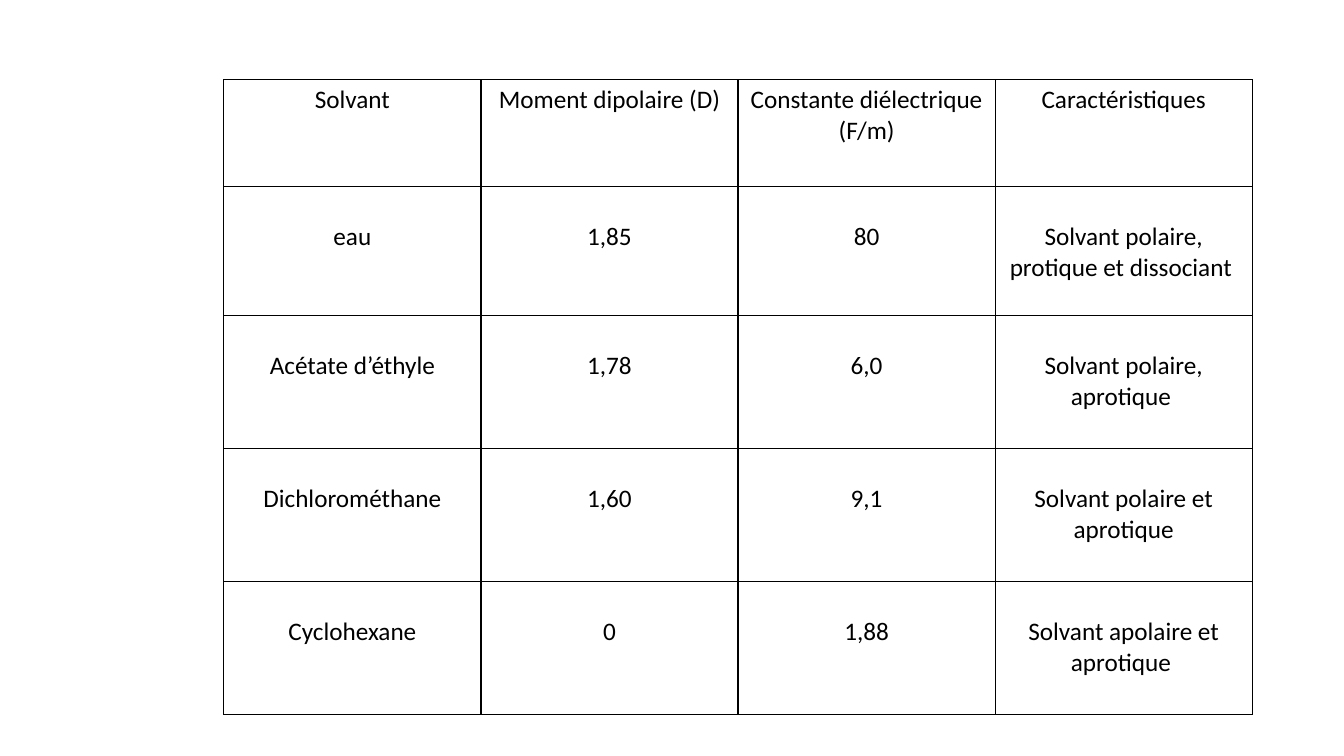
"""Build a slide with a table comparing the polarity of four solvents."""
from lxml import etree
from pptx import Presentation
from pptx.dml.color import RGBColor
from pptx.enum.text import PP_ALIGN
from pptx.oxml.ns import qn
from pptx.util import Inches, Pt

CENTER = PP_ALIGN.CENTER
BLACK = "000000"
SOLVENTS = [
    ("Solvant", "Moment dipolaire (D)", "Constante diélectrique (F/m)", "Caractéristiques"),
    ("eau", "1,85", "80", "Solvant polaire, protique et dissociant "),
    ("Acétate d’éthyle", "1,78", "6,0", "Solvant polaire, aprotique "),
    ("Dichlorométhane", "1,60", "9,1", "Solvant polaire et aprotique"),
    ("Cyclohexane", "0", "1,88", "Solvant apolaire et aprotique "),
]
LEFT, TOP = 2.22, 0.79
COLUMN_WIDTH = 2.55
ROW_HEIGHTS = [1.06, 1.28, 1.32, 1.32, 1.32]
HEADER_MARGIN, BODY_MARGIN = 0.05, 0.35


def color(code):
    return RGBColor.from_string(code)


def add_borders(cell):
    properties = cell._tc.get_or_add_tcPr()
    for position, side in enumerate(("lnL", "lnR", "lnT", "lnB")):
        line = etree.Element(qn(f"a:{side}"), w=str(Pt(1)))
        fill = etree.SubElement(line, qn("a:solidFill"))
        etree.SubElement(fill, qn("a:srgbClr"), val=BLACK)
        properties.insert(position, line)


def fill_cell(cell, text, top_margin):
    cell.fill.background()
    cell.margin_top = Inches(top_margin)
    cell.text = text
    paragraph = cell.text_frame.paragraphs[0]
    paragraph.alignment = CENTER
    paragraph.font.name = "Calibri"
    paragraph.font.size = Pt(18)
    paragraph.font.bold = False
    paragraph.font.color.rgb = color(BLACK)
    add_borders(cell)


def main():
    presentation = Presentation()
    presentation.slide_width = Inches(13.33)
    presentation.slide_height = Inches(7.5)
    slide = presentation.slides.add_slide(presentation.slide_layouts[6])

    column_count = len(SOLVENTS[0])
    solvent_table = slide.shapes.add_table(
        len(SOLVENTS), column_count, Inches(LEFT), Inches(TOP),
        Inches(COLUMN_WIDTH * column_count), Inches(sum(ROW_HEIGHTS))).table
    solvent_table.first_row = False
    solvent_table.horz_banding = False
    for column in solvent_table.columns:
        column.width = Inches(COLUMN_WIDTH)
    for index, (solvent, height) in enumerate(zip(SOLVENTS, ROW_HEIGHTS)):
        row = solvent_table.rows[index]
        row.height = Inches(height)
        top_margin = BODY_MARGIN if index else HEADER_MARGIN
        for cell, text in zip(row.cells, solvent):
            fill_cell(cell, text, top_margin)

    presentation.save("out.pptx")


if __name__ == "__main__":
    main()
